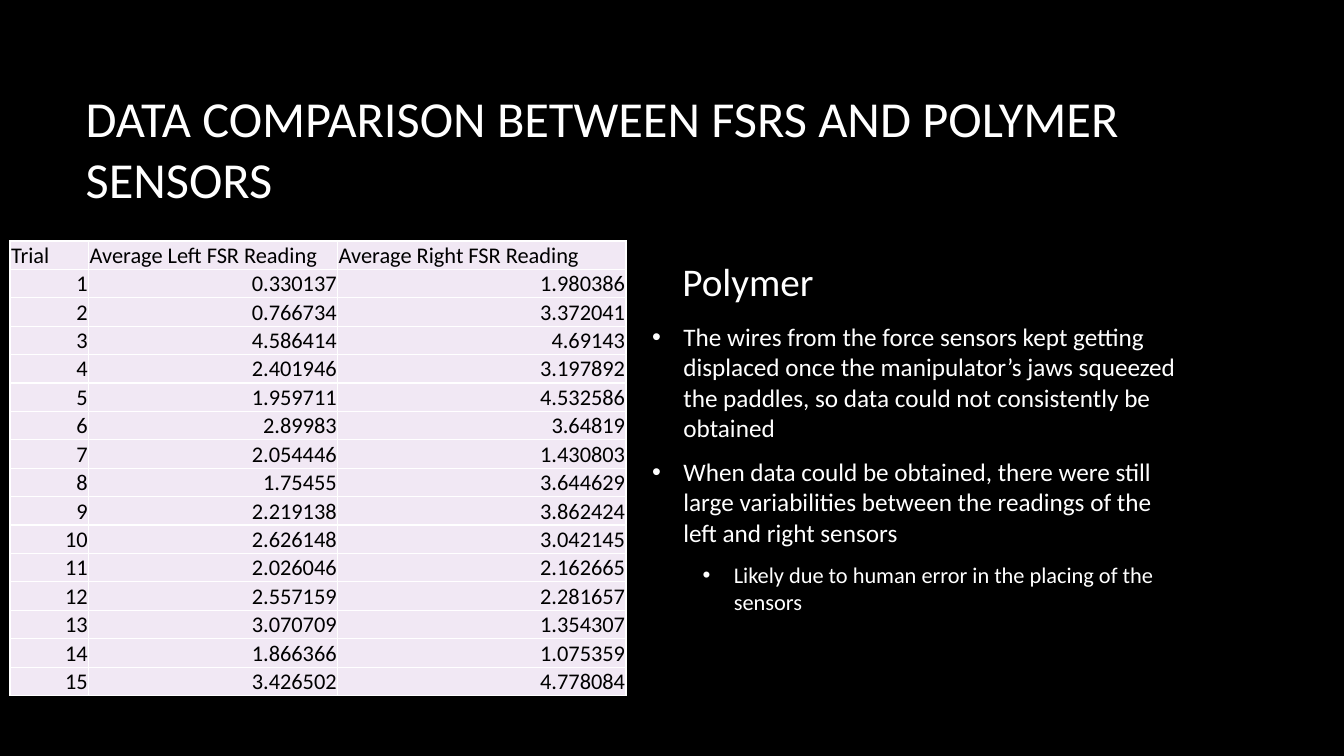
from dataclasses import dataclass

from pptx import Presentation
from pptx.dml.color import RGBColor
from pptx.enum.text import MSO_ANCHOR as Anchor, MSO_AUTO_SIZE as AutoSize, PP_ALIGN as Align
from pptx.oxml import parse_xml
from pptx.oxml.ns import nsdecls
from pptx.slide import Slide
from pptx.text.text import TextFrame
from pptx.util import Inches, Pt


@dataclass(frozen=True)
class Theme:
    font: str = "Calibri"
    background: str = "000000"
    light: str = "FFFFFF"
    dark: str = "000000"
    cell: str = "F1E8F4"
    title: int = 36
    heading: int = 28
    body: int = 18
    small: int = 16


@dataclass(frozen=True)
class Box:
    left: float
    top: float
    width: float
    height: float

    def lengths(self) -> tuple:
        return tuple(Inches(v) for v in (self.left, self.top, self.width, self.height))


@dataclass(frozen=True)
class Line:
    text: str
    size: int
    level: int = 0
    bullet: bool = False


@dataclass(frozen=True)
class Trial:
    number: int
    left: float
    right: float


THEME = Theme()
TITLE = "DATA COMPARISON BETWEEN FSRS AND POLYMER SENSORS"
TITLE_BOX = Box(0.75, 0.67, 11.08, 1.59)
HEADING_BOX = Box(6.67, 2.44, 5.16, 0.63)
FINDINGS_BOX = Box(6.37, 3.14, 5.46, 3.19)
HEADING = Line("Polymer", THEME.heading)
FINDINGS = [
    Line("The wires from the force sensors kept getting displaced once the manipulator’s jaws "
         "squeezed the paddles, so data could not consistently be obtained", THEME.body, bullet=True),
    Line("When data could be obtained, there were still large variabilities between the readings "
         "of the left and right sensors", THEME.body, bullet=True),
    Line("Likely due to human error in the placing of the sensors", THEME.small, 1, True),
]

TABLE_LEFT, TABLE_TOP, ROW_HEIGHT = 0.1, 2.39, 0.28
COLUMN_WIDTHS = [0.78, 2.47, 2.86]
HEADERS = ["Trial", "Average Left FSR Reading", "Average Right FSR Reading"]
TRIALS = [
    Trial(1, 0.330137, 1.980386),
    Trial(2, 0.766734, 3.372041),
    Trial(3, 4.586414, 4.69143),
    Trial(4, 2.401946, 3.197892),
    Trial(5, 1.959711, 4.532586),
    Trial(6, 2.89983, 3.64819),
    Trial(7, 2.054446, 1.430803),
    Trial(8, 1.75455, 3.644629),
    Trial(9, 2.219138, 3.862424),
    Trial(10, 2.626148, 3.042145),
    Trial(11, 2.026046, 2.162665),
    Trial(12, 2.557159, 2.281657),
    Trial(13, 3.070709, 1.354307),
    Trial(14, 1.866366, 1.075359),
    Trial(15, 3.426502, 4.778084),
]


def style_font(font, size: int, color: str) -> None:
    font.name = THEME.font
    font.size = Pt(size)
    font.color.rgb = RGBColor.from_string(color)


def add_bullet(p, level: int) -> None:
    pPr = p._p.get_or_add_pPr()
    pPr.set("marL", str(Inches(0.31 + 0.5 * level)))
    pPr.set("indent", str(Inches(-0.31)))
    for xml in (
        f'<a:buClr {nsdecls("a")}><a:srgbClr val="{THEME.light}"/></a:buClr>',
        f'<a:buFont {nsdecls("a")} typeface="Arial"/>',
        f'<a:buChar {nsdecls("a")} char="•"/>',
    ):
        pPr.append(parse_xml(xml))


def prepare_frame(tf: TextFrame, anchor: Anchor) -> None:
    tf.word_wrap = True
    tf.auto_size = AutoSize.NONE
    tf.vertical_anchor = anchor


def add_title(s: Slide) -> None:
    sp = s.shapes.title
    sp.left, sp.top, sp.width, sp.height = TITLE_BOX.lengths()
    tf = sp.text_frame
    prepare_frame(tf, Anchor.MIDDLE)
    tf.text = TITLE
    p = tf.paragraphs[0]
    p.alignment = Align.LEFT
    style_font(p.runs[0].font, THEME.title, THEME.light)


def add_text(s: Slide, box: Box, lines: list[Line], anchor: Anchor) -> None:
    tf = s.shapes.add_textbox(*box.lengths()).text_frame
    prepare_frame(tf, anchor)
    for i, line in enumerate(lines):
        p = tf.add_paragraph() if i else tf.paragraphs[0]
        p.text = line.text
        p.level = line.level
        p.space_after = Pt(10)
        if line.bullet:
            add_bullet(p, line.level)
        style_font(p.runs[0].font, line.size, THEME.light)


def add_borders(cell) -> None:
    tcPr = cell._tc.get_or_add_tcPr()
    for i, side in enumerate("LRTB"):
        tcPr.insert(i, parse_xml(
            f'<a:ln{side} {nsdecls("a")} w="{Pt(1)}"><a:solidFill>'
            f'<a:srgbClr val="{THEME.light}"/></a:solidFill></a:ln{side}>'))


def fill_cell(cell, text: str, align: Align) -> None:
    cell.fill.solid()
    cell.fill.fore_color.rgb = RGBColor.from_string(THEME.cell)
    add_borders(cell)
    cell.margin_left = cell.margin_right = cell.margin_top = Inches(0.01)
    cell.margin_bottom = 0
    cell.vertical_anchor = Anchor.BOTTOM
    p = cell.text_frame.paragraphs[0]
    p.text = text
    p.alignment = align
    style_font(p.runs[0].font, THEME.small, THEME.dark)


def add_readings_table(s: Slide) -> None:
    rows = [HEADERS] + [[str(v) for v in (t.number, t.left, t.right)] for t in TRIALS]
    box = Box(TABLE_LEFT, TABLE_TOP, sum(COLUMN_WIDTHS), ROW_HEIGHT * len(rows))
    table = s.shapes.add_table(len(rows), len(HEADERS), *box.lengths()).table
    table.first_row = table.horz_banding = False
    for column, width in zip(table.columns, COLUMN_WIDTHS):
        column.width = Inches(width)
    for r, row in enumerate(rows):
        table.rows[r].height = Inches(ROW_HEIGHT)
        for c, text in enumerate(row):
            fill_cell(table.cell(r, c), text, Align.RIGHT if r else Align.LEFT)


def main() -> None:
    prs = Presentation()
    prs.slide_width, prs.slide_height = Inches(13.33), Inches(7.5)
    s = prs.slides.add_slide(prs.slide_layouts[5])
    s.background.fill.solid()
    s.background.fill.fore_color.rgb = RGBColor.from_string(THEME.background)
    add_title(s)
    add_text(s, HEADING_BOX, [HEADING], Anchor.BOTTOM)
    add_text(s, FINDINGS_BOX, FINDINGS, Anchor.TOP)
    add_readings_table(s)
    prs.save("out.pptx")


if __name__ == "__main__":
    main()
